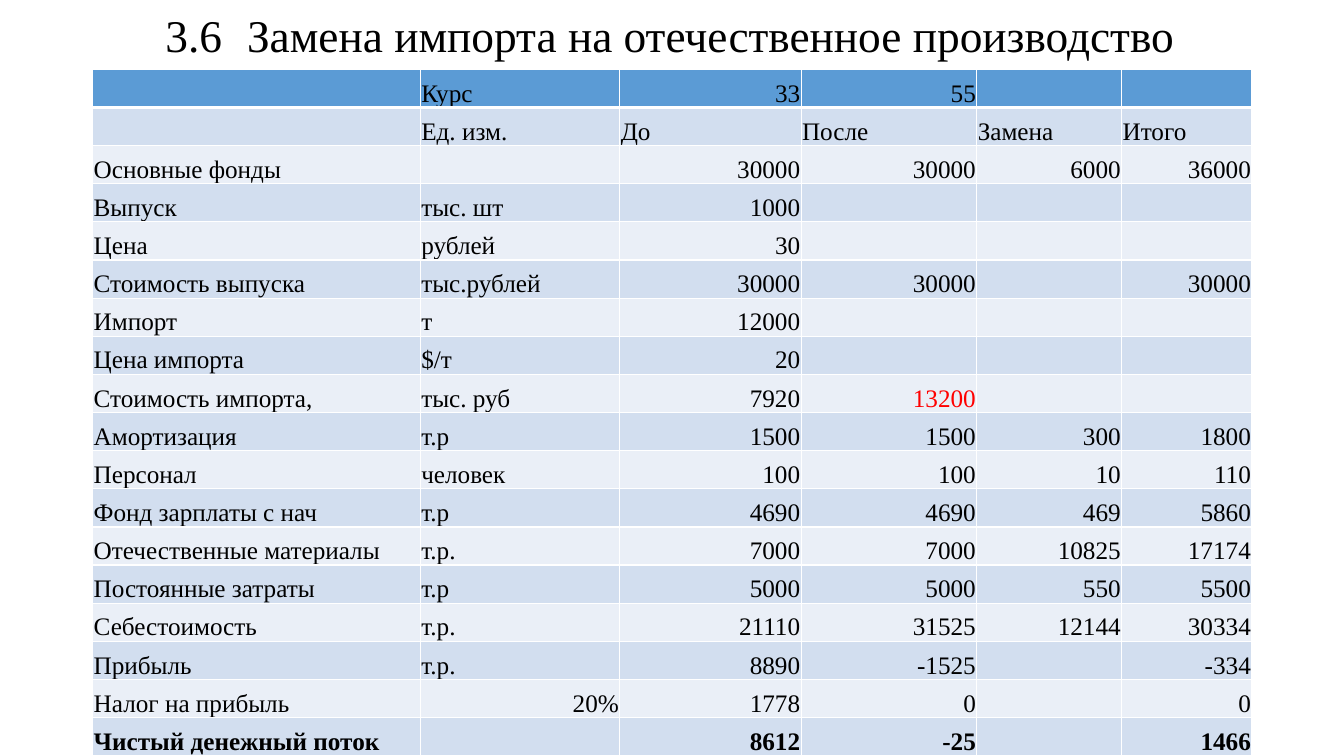
import pptx
import pptx.dml.color
import pptx.enum.text
import pptx.oxml.ns
import pptx.util
from lxml import etree

Pt = pptx.util.Pt
Align = pptx.enum.text.PP_ALIGN
Anchor = pptx.enum.text.MSO_ANCHOR

NUMBER = "3.6"
TITLE = "Замена импорта на отечественное производство"
ROWS = [
    ("", "Курс", "33", "55", "", ""),
    ("", "Ед. изм.", "До", "После", "Замена", "Итого"),
    ("Основные фонды", "", "30000", "30000", "6000", "36000"),
    ("Выпуск", "тыс. шт", "1000", "", "", ""),
    ("Цена", "рублей", "30", "", "", ""),
    ("Стоимость выпуска", "тыс.рублей", "30000", "30000", "", "30000"),
    ("Импорт", "т", "12000", "", "", ""),
    ("Цена импорта", "$/т", "20", "", "", ""),
    ("Стоимость импорта,", "тыс. руб", "7920", "13200", "", ""),
    ("Амортизация", "т.р", "1500", "1500", "300", "1800"),
    ("Персонал", "человек", "100", "100", "10", "110"),
    ("Фонд зарплаты с нач", "т.р", "4690", "4690", "469", "5860"),
    ("Отечественные материалы", "т.р.", "7000", "7000", "10825", "17174"),
    ("Постоянные затраты", "т.р", "5000", "5000", "550", "5500"),
    ("Себестоимость", "т.р.", "21110", "31525", "12144", "30334"),
    ("Прибыль", "т.р.", "8890", "-1525", "", "-334"),
    ("Налог на прибыль", "20%", "1778", "0", "", "0"),
    ("Чистый денежный поток", "", "8612", "-25", "", "1466"),
]
ALERT = "13200"
COLS = [234, 142.5, 129.5, 125.5, 103.5, 93]
LEFT, TOP, HIGH = 66.25, 49.5, 490.5
COLORS = {"head": "5B9BD5", "dark": "D2DEEF", "light": "EAEFF7",
          "line": "FFFFFF", "text": "000000", "alert": "FF0000"}
SERIF = "Times New Roman"
CELL = {"margin_left": Pt(0.7), "margin_right": Pt(0.7), "margin_top": Pt(0.7),
        "margin_bottom": 0, "vertical_anchor": Anchor.BOTTOM}


def put(target, values):
    for key, value in values.items():
        setattr(target, key, value)


def tint(part, name):
    part.rgb = pptx.dml.color.RGBColor.from_string(COLORS[name])


def write(para, text, size, face=SERIF, bold=False, color="text"):
    run = para.add_run()
    run.text = text
    put(run.font, {"size": Pt(size), "name": face, "bold": bold})
    tint(run.font.color, color)


def edge(cell, widths):
    """Draw cell borders; widths maps a side (L, R, T, B) to points."""
    props = cell._tc.get_or_add_tcPr()
    qn = pptx.oxml.ns.qn
    for spot, (side, width) in enumerate(widths.items()):
        line = etree.Element(qn("a:ln" + side), w=str(Pt(width)))
        fill = etree.SubElement(line, qn("a:solidFill"))
        etree.SubElement(fill, qn("a:srgbClr"), val=COLORS["line"])
        props.insert(spot, line)


def add_title(slide):
    title = slide.shapes.title
    put(title, {"left": Pt(LEFT), "top": 0, "width": Pt(sum(COLS)), "height": Pt(TOP)})
    frame = title.text_frame
    put(frame, {"word_wrap": True, "vertical_anchor": Anchor.MIDDLE,
                "auto_size": pptx.enum.text.MSO_AUTO_SIZE.NONE})
    para = frame.paragraphs[0]
    put(para, {"alignment": Align.LEFT, "line_spacing": 0.9})
    # A hanging indent sets the gap between number and title
    props = para._p.get_or_add_pPr()
    props.set("marL", str(Pt(103)))
    props.set("indent", str(Pt(-58.3)))
    write(para, NUMBER, 32.4)
    write(para, "\t", 39.6, "Calibri")
    write(para, TITLE, 32.4)


def add_grid(slide):
    frame = slide.shapes.add_table(len(ROWS), len(COLS), Pt(LEFT), Pt(TOP),
                                   Pt(sum(COLS)), Pt(HIGH))
    table = frame.table
    for col, width in zip(table.columns, COLS):
        col.width = Pt(width)
    for r, row in enumerate(ROWS):
        table.rows[r].height = Pt(HIGH / len(ROWS))
        band = "head" if r == 0 else "dark" if r % 2 else "light"
        for c, text in enumerate(row):
            cell = table.cell(r, c)
            put(cell, CELL)
            cell.fill.solid()
            tint(cell.fill.fore_color, band)
            edge(cell, {"L": 1, "R": 1, "T": 3 if r == 1 else 1, "B": 3 if r == 0 else 1})
            if text:
                para = cell.text_frame.paragraphs[0]
                digits = text.strip("-%").isdigit()
                para.alignment = Align.RIGHT if digits else Align.LEFT
                write(para, text, 18, bold=r == len(ROWS) - 1,
                      color="alert" if text == ALERT else "text")


def main():
    deck = pptx.Presentation()
    put(deck, {"slide_width": Pt(960), "slide_height": Pt(540)})
    slide = deck.slides.add_slide(deck.slide_layouts[5])
    add_title(slide)
    add_grid(slide)
    deck.save("out.pptx")


if __name__ == "__main__":
    main()
